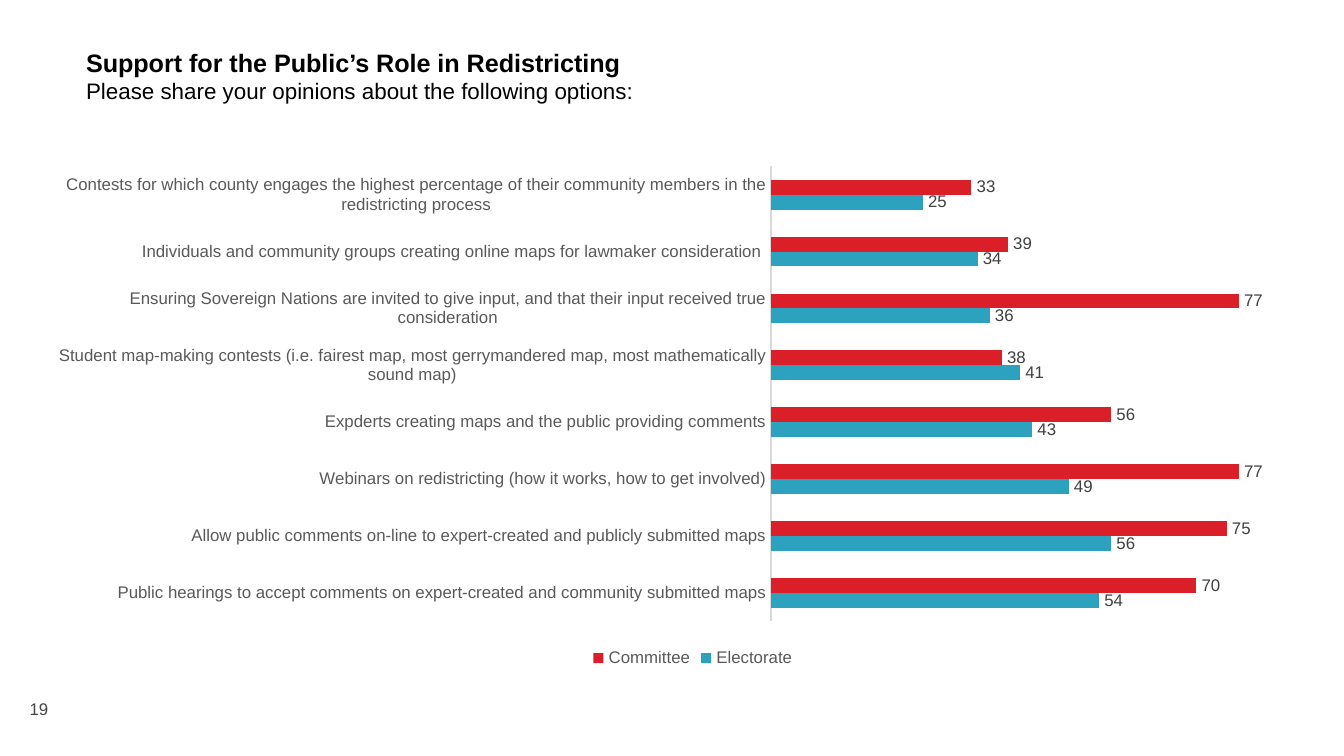
import dataclasses

import pptx
import pptx.chart.data
import pptx.dml.color
import pptx.enum.chart
import pptx.enum.text
import pptx.oxml
import pptx.oxml.ns
import pptx.util
from pptx.util import Inches


@dataclasses.dataclass(frozen=True)
class Theme:
    font: str = "Arial"
    black: str = "000000"
    number: str = "464646"
    axis_text: str = "595959"
    axis_line: str = "D9D9D9"
    value_text: str = "404040"
    electorate: str = "2DA2BF"
    committee: str = "DA1F28"
    title_size: float = 13.5
    subtitle_size: float = 12
    chart_size: float = 10
    small_size: float = 9


THEME = Theme()

# Category, electorate share, committee share, from the bottom bar upwards
SUPPORT = [
    ("Public hearings to accept comments on expert-created and community submitted maps", 54, 70),
    ("Allow public comments on-line to expert-created and publicly submitted maps", 56, 75),
    ("Webinars on redistricting (how it works, how to get involved)", 49, 77),
    ("Expderts creating maps and the public providing comments", 43, 56),
    ("Student map-making contests (i.e. fairest map, most gerrymandered map, "
     "most mathematically sound map)", 41, 38),
    ("Ensuring Sovereign Nations are invited to give input, and that their input "
     "received true consideration", 36, 77),
    ("Individuals and community groups creating online maps for lawmaker consideration ", 34, 39),
    ("Contests for which county engages the highest percentage of their community "
     "members in the redistricting process", 25, 33),
]


def rgb(value):
    return pptx.dml.color.RGBColor.from_string(value)


def style_font(font, size, color, bold=False):
    font.name = THEME.font
    font.size = pptx.util.Pt(size)
    font.bold = bold
    font.color.rgb = rgb(color)


def place(shape, box):
    shape.left, shape.top, shape.width, shape.height = (Inches(length) for length in box)


def add_heading(page, box):
    title = page.shapes.title
    place(title, box)
    frame = title.text_frame
    frame.text = ("Support for the Public’s Role in Redistricting\n"
                  "Please share your opinions about the following options:")
    frame.word_wrap = True
    frame.auto_size = pptx.enum.text.MSO_AUTO_SIZE.NONE
    frame.vertical_anchor = pptx.enum.text.MSO_ANCHOR.MIDDLE
    sizes = (THEME.title_size, THEME.subtitle_size)
    for para, size, bold in zip(frame.paragraphs, sizes, (True, False)):
        para.alignment = pptx.enum.text.PP_ALIGN.LEFT
        para.space_before = pptx.util.Pt(0)
        style_font(para.runs[0].font, size, THEME.black, bold)


def add_page_number(page, box, number):
    frame = page.shapes.add_textbox(*(Inches(length) for length in box)).text_frame
    frame.word_wrap = True
    frame.vertical_anchor = pptx.enum.text.MSO_ANCHOR.MIDDLE
    frame.text = str(number)
    para = frame.paragraphs[0]
    para.alignment = pptx.enum.text.PP_ALIGN.CENTER
    style_font(para.runs[0].font, THEME.small_size, THEME.number)


def set_plot_layout(chart, left, top, width, height):
    """Fix the inner plot area, in fractions of the chart."""
    plot_area = chart._chartSpace.chart.plotArea
    for old in plot_area.findall(pptx.oxml.ns.qn("c:layout")):
        plot_area.remove(old)
    plot_area.insert(0, pptx.oxml.parse_xml(
        f'<c:layout {pptx.oxml.ns.nsdecls("c")}><c:manualLayout>'
        '<c:layoutTarget val="inner"/><c:xMode val="edge"/><c:yMode val="edge"/>'
        f'<c:x val="{left}"/><c:y val="{top}"/><c:w val="{width}"/><c:h val="{height}"/>'
        '</c:manualLayout></c:layout>'))


def add_support_chart(page, box):
    names, electorate, committee = zip(*SUPPORT)
    data = pptx.chart.data.CategoryChartData()
    data.categories = names
    data.add_series("Electorate", electorate)
    data.add_series("Committee", committee)
    chart = page.shapes.add_chart(
        pptx.enum.chart.XL_CHART_TYPE.BAR_CLUSTERED,
        *(Inches(length) for length in box), data).chart
    style_font(chart.font, THEME.chart_size, THEME.black)
    chart.has_title = False
    set_plot_layout(chart, 0.56, 0.02, 0.42, 0.88)

    # Axes
    category_axis = chart.category_axis
    category_axis.major_tick_mark = pptx.enum.chart.XL_TICK_MARK.NONE
    category_axis.format.line.color.rgb = rgb(THEME.axis_line)
    category_axis.format.line.width = pptx.util.Pt(0.75)
    style_font(category_axis.tick_labels.font, THEME.small_size, THEME.axis_text)
    value_axis = chart.value_axis
    value_axis.minimum_scale, value_axis.maximum_scale = 0, 90
    value_axis.has_major_gridlines = False
    value_axis.visible = False

    # Legend
    chart.has_legend = True
    chart.legend.position = pptx.enum.chart.XL_LEGEND_POSITION.BOTTOM
    chart.legend.include_in_layout = False
    style_font(chart.legend.font, THEME.small_size, THEME.axis_text)

    # Bars and value labels
    plot = chart.plots[0]
    plot.gap_width = 182
    plot.overlap = 0
    plot.vary_by_categories = False
    for series, color in zip(plot.series, (THEME.electorate, THEME.committee)):
        series.format.fill.solid()
        series.format.fill.fore_color.rgb = rgb(color)
        series.invert_if_negative = False
        labels = series.data_labels
        labels.show_value = True
        labels.position = pptx.enum.chart.XL_LABEL_POSITION.OUTSIDE_END
        style_font(labels.font, THEME.small_size, THEME.value_text)


def main():
    deck = pptx.Presentation()
    # Widescreen page, 16:9
    deck.slide_width = Inches(10)
    deck.slide_height = Inches(10 * 9 / 16)
    page = deck.slides.add_slide(deck.slide_layouts.get_by_name("Title Only"))
    add_heading(page, (0.54, 0.2, 8.92, 0.73))
    add_support_chart(page, (0.31, 1.16, 9.69, 3.85))
    add_page_number(page, (0, 5.12, 0.58, 0.31), 19)
    deck.save("out.pptx")


if __name__ == "__main__":
    main()
